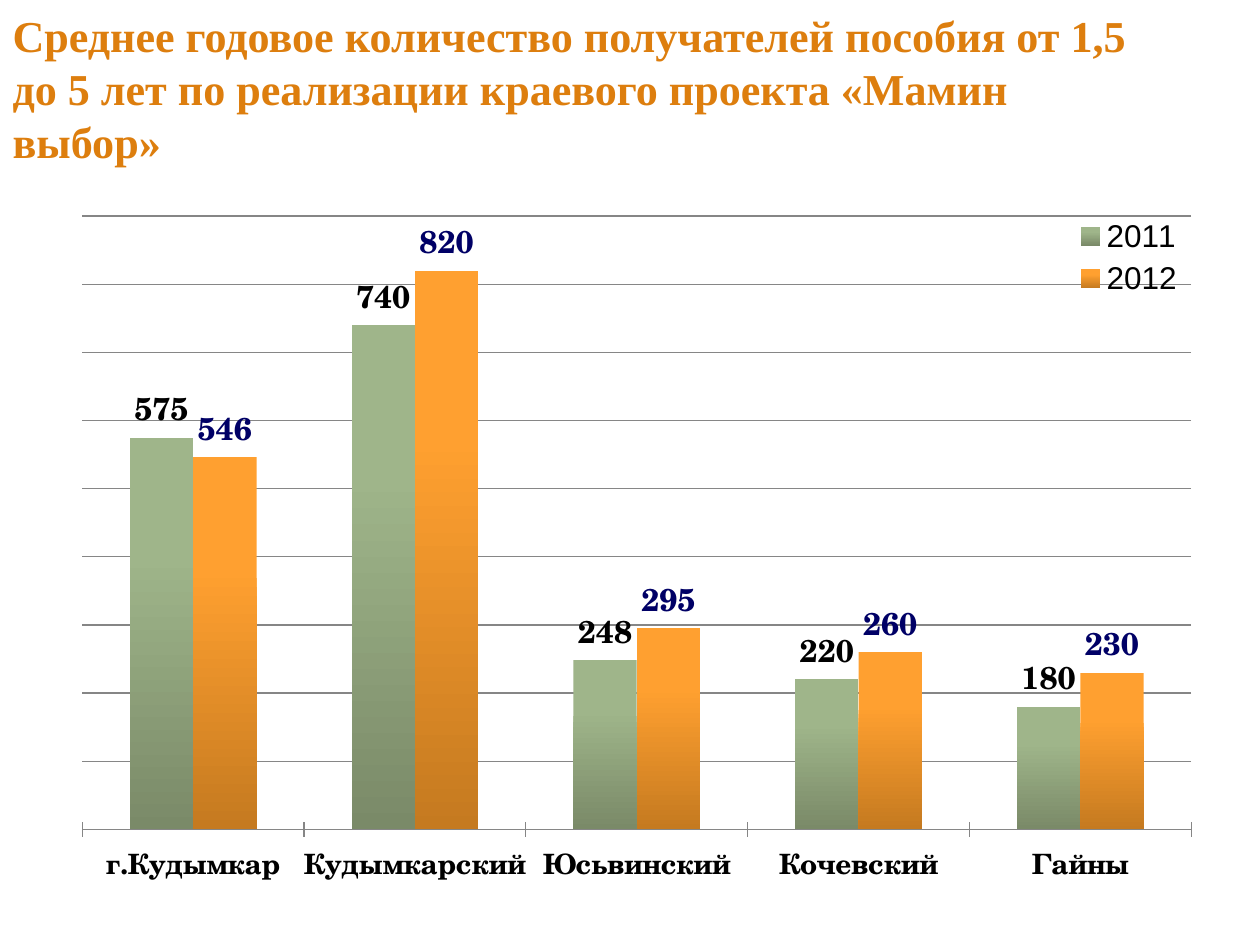
import pptx
import pptx.chart.data
import pptx.dml.color
import pptx.enum.chart
import pptx.enum.text
import pptx.oxml
import pptx.oxml.ns
import pptx.util

TITLE = ("Среднее годовое количество получателей пособия от 1,5 до 5 лет "
         "по реализации краевого проекта «Мамин выбор»")
CATEGORIES = ["г.Кудымкар", "Кудымкарский", "Юсьвинский", "Кочевский", "Гайны"]
SERIES = [
    {"name": "2011", "values": [575, 740, 248, 220, 180],
     "top": "green", "bottom": "dark_green", "label": "black"},
    {"name": "2012", "values": [546, 820, 295, 260, 230],
     "top": "orange", "bottom": "dark_orange", "label": "navy"},
]
COLORS = {
    "title": "DD7E0E", "black": "000000", "navy": "000066", "grid": "868686",
    "green": "9FB58A", "dark_green": "7A8A68",
    "orange": "FFA030", "dark_orange": "C57A20",
}
TITLE_BOX = (0, 49, 1168, 78)
CHART_BOX = (63, 197, 1134, 709)
PLOT_LAYOUT = (0.017, 0.027, 0.978, 0.865)
LEGEND_LAYOUT = (0.89, 0.02, 0.1, 0.13)
LABEL_FONT = "TeX Gyre Schola"
EMU_PER_PX = 914400 / 126


def px(length):
    return pptx.util.Emu(round(length * EMU_PER_PX))


def rgb(name):
    return pptx.dml.color.RGBColor.from_string(COLORS[name])


def style(font, name, size, color, bold):
    font.name = name
    font.size = pptx.util.Pt(size)
    font.bold = bold
    font.color.rgb = rgb(color)


def layout_element(box, inner=False):
    target = '<c:layoutTarget val="inner"/>' if inner else ""
    modes = "".join(f'<c:{side}Mode val="edge"/>' for side in "xy")
    sizes = "".join(f'<c:{side} val="{value}"/>' for side, value in zip("xywh", box))
    return pptx.oxml.parse_xml(
        f'<c:layout {pptx.oxml.ns.nsdecls("c")}><c:manualLayout>'
        f"{target}{modes}{sizes}</c:manualLayout></c:layout>")


def set_layout(parent, layout, index):
    for old in parent.findall(pptx.oxml.ns.qn("c:layout")):
        parent.remove(old)
    parent.insert(index, layout)


def add_title(slide):
    title = slide.shapes.title
    title.left, title.top, title.width, title.height = map(px, TITLE_BOX)
    frame = title.text_frame
    frame.text = TITLE
    frame.word_wrap = True
    frame.auto_size = pptx.enum.text.MSO_AUTO_SIZE.NONE
    frame.vertical_anchor = pptx.enum.text.MSO_ANCHOR.MIDDLE
    paragraph = frame.paragraphs[0]
    paragraph.alignment = pptx.enum.text.PP_ALIGN.LEFT
    style(paragraph.font, "Times New Roman", 25.2, "title", True)
    paragraph.runs[0]._r.get_or_add_rPr().append(pptx.oxml.parse_xml(
        f'<a:effectLst {pptx.oxml.ns.nsdecls("a")}>'
        '<a:outerShdw blurRad="38100" dist="38100" dir="2700000" algn="tl">'
        '<a:srgbClr val="000000"><a:alpha val="43000"/></a:srgbClr>'
        "</a:outerShdw></a:effectLst>"))


def style_series(series, entry):
    fill = series.format.fill
    fill.gradient()
    fill.gradient_angle = 270
    for stop, position, color in zip(fill.gradient_stops, (0.3, 1), ("top", "bottom")):
        stop.position = position
        stop.color.rgb = rgb(entry[color])
    labels = series.data_labels
    labels.show_value = True
    labels.position = pptx.enum.chart.XL_LABEL_POSITION.OUTSIDE_END
    style(labels.font, LABEL_FONT, 18, entry["label"], True)


def add_chart(slide):
    data = pptx.chart.data.CategoryChartData()
    data.categories = CATEGORIES
    for entry in SERIES:
        data.add_series(entry["name"], entry["values"])
    chart = slide.shapes.add_chart(
        pptx.enum.chart.XL_CHART_TYPE.COLUMN_CLUSTERED, *map(px, CHART_BOX), data).chart
    chart.has_title = False
    style(chart.font, "Arial", 18, "black", False)

    plot = chart.plots[0]
    plot.vary_by_categories = False
    plot.gap_width = 150
    plot.overlap = 0
    for series, entry in zip(plot.series, SERIES):
        style_series(series, entry)

    category_axis = chart.category_axis
    category_axis.major_tick_mark = pptx.enum.chart.XL_TICK_MARK.CROSS
    category_axis.format.line.color.rgb = rgb("grid")
    style(category_axis.tick_labels.font, LABEL_FONT, 16, "black", True)

    value_axis = chart.value_axis
    value_axis.visible = False
    value_axis.minimum_scale, value_axis.maximum_scale = 0, 900
    value_axis.major_unit = 100
    value_axis.has_major_gridlines = True
    value_axis.major_gridlines.format.line.color.rgb = rgb("grid")

    chart.has_legend = True
    legend = chart.legend
    legend.position = pptx.enum.chart.XL_LEGEND_POSITION.RIGHT
    legend.include_in_layout = False
    style(legend.font, "Arial", 18, "black", False)
    set_layout(legend._element, layout_element(LEGEND_LAYOUT), 1)
    plot_area = chart._chartSpace.chart.plotArea
    set_layout(plot_area, layout_element(PLOT_LAYOUT, inner=True), 0)


def main():
    presentation = pptx.Presentation()
    presentation.slide_width = px(1260)
    presentation.slide_height = px(945)
    slide = presentation.slides.add_slide(presentation.slide_layouts[5])
    add_title(slide)
    add_chart(slide)
    presentation.save("out.pptx")


if __name__ == "__main__":
    main()
